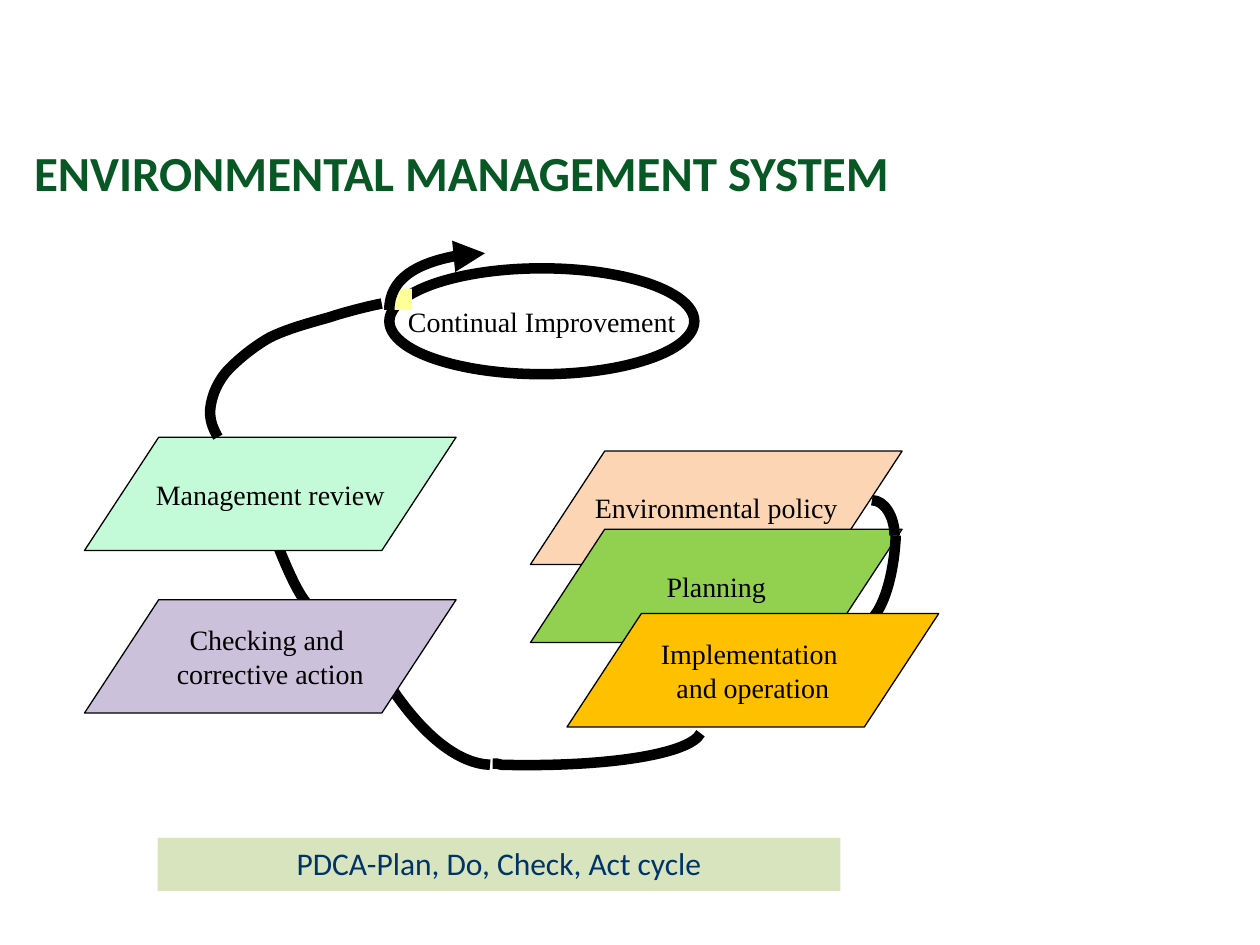
import math

import pptx
import pptx.dml.color
import pptx.enum.shapes
import pptx.enum.text
import pptx.oxml
import pptx.oxml.ns
import pptx.util
from pptx.util import Inches

COLORS = {
    "title": "075825", "navy": "003366", "banner": "D7E4BD", "black": "000000",
    "policy": "FCD5B5", "planning": "92D050", "operation": "FFC000",
    "review": "C3FBD8", "checking": "CCC1DA", "marker": "FFFF99",
}
SHAPE = pptx.enum.shapes.MSO_SHAPE
ALIGN = pptx.enum.text.PP_ALIGN
ANCHOR = pptx.enum.text.MSO_ANCHOR
NS = 'xmlns:a="http://schemas.openxmlformats.org/drawingml/2006/main"'


def rgb(name):
    return pptx.dml.color.RGBColor.from_string(COLORS[name])


def write(tf, text, font="Times New Roman", size=16, color="black", bold=False,
          align=ALIGN.CENTER, anchor=ANCHOR.MIDDLE, wrap=False):
    """Fill a text frame; a newline becomes a line break."""
    tf.word_wrap = wrap
    tf.vertical_anchor = anchor
    p = tf.paragraphs[0]
    p.text = text.replace("\n", "\v")
    p.alignment = align
    for r in p.runs:
        r.font.name = font
        r.font.size = pptx.util.Pt(size)
        r.font.bold = bold
        r.font.color.rgb = rgb(color)


class Builder:
    def __init__(self, s):
        self.s = s
        self.thin, self.thick = 0.75, 6

    def title(self, text, x, y, w, h):
        sp = self.s.shapes.title
        sp.left, sp.top, sp.width, sp.height = map(Inches, (x, y, w, h))
        write(sp.text_frame, text, font="Calibri", size=28, color="title", bold=True,
              align=ALIGN.LEFT, anchor=ANCHOR.TOP, wrap=True)
        sp.text_frame.auto_size = pptx.enum.text.MSO_AUTO_SIZE.NONE

    def shape(self, kind, x, y, w, h, fill=None, line=None, text=None, **fmt):
        sp = self.s.shapes.add_shape(kind, *map(Inches, (x, y, w, h)))
        self.paint(sp, fill, line)
        if text:
            write(sp.text_frame, text, **fmt)

    def step(self, text, x, y, fill):
        self.shape(SHAPE.FLOWCHART_DATA, x, y, 2.95, 0.9, fill, self.thin, text)

    def curve(self, frame, start, *segments, hub=None, turn=0, arrow=False):
        """Thick cubic curve in a turned frame; hub closes its unlined sector."""
        x, y, w, h = frame
        cos, sin = math.cos(math.radians(turn)), math.sin(math.radians(turn))

        def pt(point):
            dx, dy = point[0] - x - w / 2, point[1] - y - h / 2
            local = dx * cos + dy * sin + w / 2, dy * cos - dx * sin + h / 2
            return '<a:pt x="%d" y="%d"/>' % tuple(map(Inches, local))

        def outline(attrs, end=""):
            return (f'<a:path w="{Inches(w)}" h="{Inches(h)}" {attrs}>'
                    f'{route}{end}</a:path>')

        route = f"<a:moveTo>{pt(start)}</a:moveTo>" + "".join(
            f"<a:cubicBezTo>{''.join(map(pt, seg))}</a:cubicBezTo>" for seg in segments)
        paths = outline('fill="none"')
        if hub:
            paths += outline('stroke="0"', f"<a:lnTo>{pt(hub)}</a:lnTo><a:close/>")

        fb = self.s.shapes.build_freeform(Inches(x), Inches(y))
        fb.add_line_segments([(Inches(x + w), Inches(y + h))], close=False)
        sp = fb.convert_to_shape()
        old = sp._element.find(".//" + pptx.oxml.ns.qn("a:pathLst"))
        old.getparent().replace(
            old, pptx.oxml.parse_xml(f"<a:pathLst {NS}>{paths}</a:pathLst>"))
        sp.rotation = turn
        self.paint(sp, None, self.thick)
        if arrow:
            ln = sp._element.spPr.find(pptx.oxml.ns.qn("a:ln"))
            ln.append(pptx.oxml.parse_xml(f'<a:headEnd {NS} type="triangle"/>'))

    def paint(self, sp, fill, line):
        sp.shadow.inherit = False
        if fill:
            sp.fill.solid()
            sp.fill.fore_color.rgb = rgb(fill)
        else:
            sp.fill.background()
        if line:
            sp.line.color.rgb = rgb("black")
            sp.line.width = pptx.util.Pt(line)
        else:
            sp.line.fill.background()


def main():
    prs = pptx.Presentation()
    prs.slide_width, prs.slide_height = Inches(10), Inches(7.5)
    b = Builder(prs.slides.add_slide(prs.slide_layouts[5]))

    # Title and banner
    b.title("ENVIRONMENTAL MANAGEMENT SYSTEM", 0.17, 1.08, 7.42, 0.57)
    b.shape(SHAPE.RECTANGLE, 1.25, 6.65, 5.42, 0.42, "banner",
            text="PDCA-Plan, Do, Check, Act cycle", font="Calibri", size=18,
            color="navy", anchor=ANCHOR.TOP, wrap=True)

    # Policy, planning and operation, linked on the right
    b.step("Environmental policy", 4.21, 3.58, "policy")
    b.step("Planning", 4.21, 4.2, "planning")
    b.curve((6.92, 3.97, 0.18, 0.28), (6.92, 3.97),
            ((7.02, 3.97), (7.1, 4.1), (7.1, 4.25)), hub=(6.92, 4.25))
    b.curve((6.58, 4.46, 0.73, 0.3), (7.11, 4.25),
            ((7.09, 4.66), (6.96, 4.98), (6.8, 4.97)),
            ((6.79, 4.97), (6.79, 4.97), (6.79, 4.97)), hub=(6.82, 4.24), turn=92)
    b.step("Implementation \nand operation", 4.5, 4.87, "operation")

    # Links from operation through checking to review
    b.curve((4.57, 5.1, 0.34, 1.64), (5.56, 5.82),
            ((5.47, 5.99), (4.79, 6.09), (3.98, 6.07)),
            ((3.96, 6.06), (3.93, 6.06), (3.91, 6.06)), hub=(3.99, 5.73), turn=92)
    b.curve((3, 3.75, 0.71, 2.41), (3.89, 6.07),
            ((3.65, 6.06), (3.38, 5.86), (3.12, 5.48)), hub=(3.4, 3.7), turn=345.6)
    b.curve((2.02, 2.52, 0.17, 2.33), (2.45, 4.8),
            ((2.39, 4.76), (2.27, 4.52), (2.13, 4.13)), hub=(1.9, 2.54), turn=345.6)

    # Improvement, review and checking
    b.shape(SHAPE.OVAL, 3.09, 2.13, 2.42, 0.84, line=b.thick,
            text="Continual Improvement")
    b.step("Management review", 0.67, 3.47, "review")
    b.step("Checking and \ncorrective action", 0.67, 4.76, "checking")

    # Link from review up to improvement, ending in the arrow
    b.curve((1.66, 2.41, 1.37, 1.06), (1.73, 3.47),
            ((1.69, 3.4), (1.66, 3.33), (1.67, 3.24)),
            ((1.68, 3.16), (1.71, 3.06), (1.79, 2.96)),
            ((1.87, 2.87), (2, 2.76), (2.14, 2.68)),
            ((2.28, 2.61), (2.47, 2.56), (2.61, 2.52)),
            ((2.76, 2.47), (2.97, 2.42), (3.03, 2.41)))
    b.shape(SHAPE.RECTANGLE, 3.09, 2.29, 0.18, 0.17, "marker")
    b.curve((3.09, 2.01, 0.77, 0.45), (3.85, 2.01),
            ((3.43, 2.01), (3.09, 2.21), (3.09, 2.46)), hub=(3.85, 2.46), arrow=True)

    prs.save("out.pptx")


if __name__ == "__main__":
    main()
